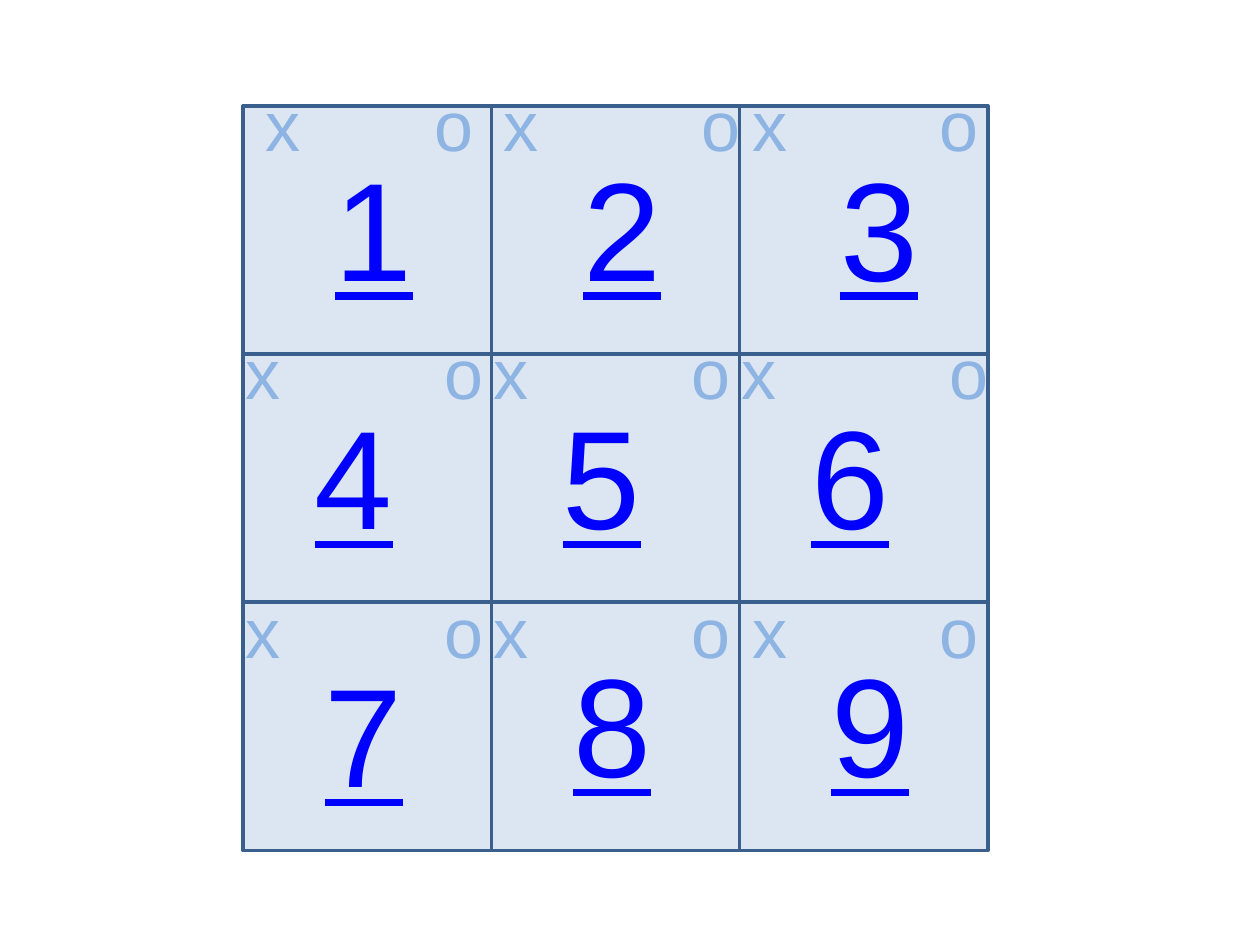
from dataclasses import dataclass

import pptx
import pptx.dml.color
import pptx.enum.shapes
import pptx.enum.text
import pptx.util
from pptx.util import Inches

COLORS = {"cell": "DCE6F2", "border": "3A5F8C", "mark": "8EB4E3", "digit": "0000FF"}
MARK_FONT = {"name": "Arial", "size": pptx.util.Pt(40)}
DIGIT_FONT = {"name": "Arial", "size": pptx.util.Pt(80), "underline": True}
BOARD_LEFT, BOARD_TOP, CELL_SIZE = 1.93, 0.84, 1.97
COLUMNS = 3


@dataclass
class Cell:
    digit: str
    cross_dx: float
    nought_dx: float
    mark_dy: float
    digit_dx: float
    digit_dy: float
    cross_width: float = 0.39


CELLS = [
    Cell("1", 0.08, 1.42, -0.24, 0.63, 0.23, cross_width=0.47),
    Cell("2", 0, 1.57, -0.24, 0.63, 0.23),
    Cell("3", 0, 1.49, -0.24, 0.7, 0.23),
    Cell("4", -0.08, 1.5, -0.24, 0.47, 0.23),
    Cell("5", -0.08, 1.49, -0.24, 0.47, 0.23),
    Cell("6", -0.08, 1.57, -0.24, 0.47, 0.23),
    Cell("7", -0.08, 1.5, -0.16, 0.55, 0.31),
    Cell("8", -0.08, 1.49, -0.16, 0.55, 0.23),
    Cell("9", 0, 1.49, -0.16, 0.63, 0.23),
]


def rgb(key: str) -> pptx.dml.color.RGBColor:
    return pptx.dml.color.RGBColor.from_string(COLORS[key])


def draw_square(slide, left: float, top: float) -> None:
    square = slide.shapes.add_shape(
        pptx.enum.shapes.MSO_SHAPE.RECTANGLE,
        Inches(left), Inches(top), Inches(CELL_SIZE), Inches(CELL_SIZE),
    )
    square.shadow.inherit = False
    square.fill.solid()
    square.fill.fore_color.rgb = rgb("cell")
    square.line.color.rgb = rgb("border")
    square.line.width = pptx.util.Pt(2)


def draw_symbol(slide, symbol: str, left: float, top: float, width: float, height: float,
                font_format: dict, color: str, wrap: bool) -> None:
    label = slide.shapes.add_textbox(Inches(left), Inches(top), Inches(width), Inches(height))
    frame = label.text_frame
    frame.word_wrap = wrap
    frame.auto_size = pptx.enum.text.MSO_AUTO_SIZE.SHAPE_TO_FIT_TEXT
    run = frame.paragraphs[0].add_run()
    run.text = symbol
    for attribute, value in font_format.items():
        setattr(run.font, attribute, value)
    run.font.color.rgb = rgb(color)


def draw_cell(slide, cell: Cell, left: float, top: float) -> None:
    draw_square(slide, left, top)
    for symbol, dx, width in (("х", cell.cross_dx, cell.cross_width), ("о", cell.nought_dx, 0.47)):
        draw_symbol(slide, symbol, left + dx, top + cell.mark_dy, width, 0.77,
                    MARK_FONT, "mark", True)
    draw_symbol(slide, cell.digit, left + cell.digit_dx, top + cell.digit_dy, 0.83, 1.45,
                DIGIT_FONT, "digit", False)


def main() -> None:
    presentation = pptx.Presentation()
    presentation.slide_width = Inches(10)
    presentation.slide_height = Inches(7.5)
    slide = presentation.slides.add_slide(presentation.slide_layouts[6])
    for index, cell in enumerate(CELLS):
        row, column = divmod(index, COLUMNS)
        draw_cell(slide, cell, BOARD_LEFT + column * CELL_SIZE, BOARD_TOP + row * CELL_SIZE)
    presentation.save("out.pptx")


if __name__ == "__main__":
    main()
